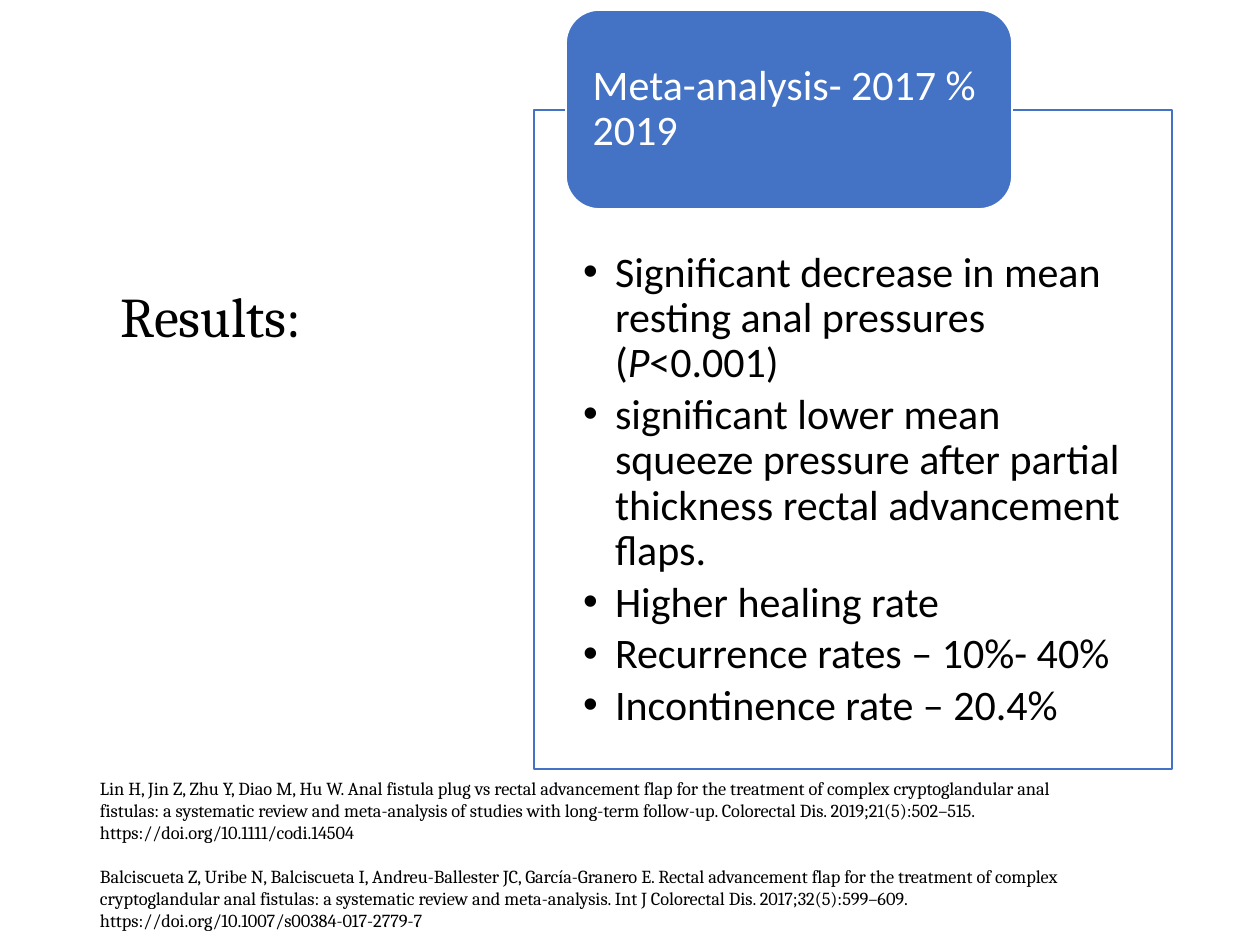
from dataclasses import dataclass

from lxml import etree
from pptx import Presentation
from pptx.dml.color import RGBColor
from pptx.enum import shapes, text
from pptx.oxml.ns import qn
from pptx.util import Emu, Pt

EMU_PER_PX = 914400 / 126


@dataclass(frozen=True)
class Theme:
    accent: RGBColor = RGBColor(0x44, 0x72, 0xC4)
    paper: RGBColor = RGBColor(0xFF, 0xFF, 0xFF)
    ink: RGBColor = RGBColor(0, 0, 0)
    sans: str = "Calibri"
    serif: str = "Cambria"
    heading: float = 32
    body: float = 24
    citation: float = 10.5


THEME = Theme()

FINDINGS = [
    [("Significant decrease in mean resting anal pressures (", False),
     ("P", True), ("<0.001)", False)],
    [("significant lower mean squeeze pressure after partial thickness "
      "rectal advancement flaps.", False)],
    [("Higher healing rate", False)],
    [("Recurrence rates – 10%- 40%", False)],
    [("Incontinence rate – 20.4%", False)],
]

CITATIONS = [
    "Lin H, Jin Z, Zhu Y, Diao M, Hu W. Anal fistula plug vs rectal advancement "
    "flap for the treatment of complex cryptoglandular anal fistulas: a systematic "
    "review and meta-analysis of studies with long-term follow-up. Colorectal Dis. "
    "2019;21(5):502–515. https://doi.org/10.1111/codi.14504",
    "Balciscueta Z, Uribe N, Balciscueta I, Andreu-Ballester JC, García-Granero E. "
    "Rectal advancement flap for the treatment of complex cryptoglandular anal "
    "fistulas: a systematic review and meta-analysis. Int J Colorectal Dis. "
    "2017;32(5):599–609. https://doi.org/10.1007/s00384-017-2779-7",
]


def px(length):
    return Emu(round(length * EMU_PER_PX))


def set_all(target, values):
    for name, value in values.items():
        setattr(target, name, value)


def add_card(slide, kind, box, fill, line):
    card = slide.shapes.add_shape(kind, *map(px, box))
    card.shadow.inherit = False
    card.fill.solid()
    card.fill.fore_color.rgb = fill
    card.line.color.rgb = line
    card.line.width = Pt(1)
    return card


def set_opacity(card, percent):
    color = card.fill._xPr.find(qn("a:solidFill"))[0]
    etree.SubElement(color, qn("a:alpha"), val=str(percent * 1000))


def set_frame(frame, insets, anchor):
    sides = ("margin_left", "margin_top", "margin_right", "margin_bottom")
    set_all(frame, dict(zip(sides, map(px, insets))))
    set_all(frame, {"word_wrap": True, "vertical_anchor": anchor})


def write_paragraphs(frame, paragraphs, font, layout):
    for index, runs in enumerate(paragraphs):
        paragraph = frame.add_paragraph() if index else frame.paragraphs[0]
        set_all(paragraph, {"alignment": text.PP_ALIGN.LEFT, **layout})
        for words, italic in runs:
            run = paragraph.add_run()
            run.text = words
            set_all(run.font, {"name": font["name"], "size": Pt(font["size"]),
                               "italic": italic})
            run.font.color.rgb = font["color"]


def add_bullets(frame, indent):
    for paragraph in frame.paragraphs:
        properties = paragraph._p.get_or_add_pPr()
        properties.set("marL", str(px(indent)))
        properties.set("indent", str(-px(indent)))
        etree.SubElement(properties, qn("a:buFont"), typeface="Arial")
        etree.SubElement(properties, qn("a:buChar"), char="•")


def add_label(slide, box, paragraphs, size, layout):
    label = slide.shapes.add_textbox(*map(px, box))
    set_frame(label.text_frame, (13, 6, 13, 6), text.MSO_ANCHOR.TOP)
    font = {"name": THEME.serif, "size": size, "color": THEME.ink}
    write_paragraphs(label.text_frame, paragraphs, font, layout)


def add_findings(slide):
    panel = add_card(slide, shapes.MSO_SHAPE.RECTANGLE, (534, 110, 638, 659),
                     THEME.paper, THEME.accent)
    set_opacity(panel, 90)
    set_frame(panel.text_frame, (49, 141, 49, 24), text.MSO_ANCHOR.TOP)
    font = {"name": THEME.sans, "size": THEME.body, "color": THEME.ink}
    write_paragraphs(panel.text_frame, FINDINGS, font,
                     {"line_spacing": 0.9, "space_after": Pt(3.6)})
    add_bullets(panel.text_frame, 32)


def add_study_header(slide):
    header = add_card(slide, shapes.MSO_SHAPE.ROUNDED_RECTANGLE,
                      (566, 10, 446, 199), THEME.accent, THEME.paper)
    set_frame(header.text_frame, (17, 0, 17, 0), text.MSO_ANCHOR.MIDDLE)
    font = {"name": THEME.sans, "size": THEME.body, "color": THEME.paper}
    write_paragraphs(header.text_frame, [[("Meta-analysis- 2017 % 2019", False)]],
                     font, {"line_spacing": 0.9})


def main():
    deck = Presentation()
    set_all(deck, {"slide_width": px(1260), "slide_height": px(945)})
    slide = deck.slides.add_slide(deck.slide_layouts[6])
    add_findings(slide)
    add_study_header(slide)
    add_label(slide, (108, 283, 353, 120), [[("Results:", False)]], THEME.heading,
              {"alignment": text.PP_ALIGN.JUSTIFY, "line_spacing": 0.9,
               "space_before": Pt(10)})
    add_label(slide, (87, 771, 1032, 169),
              [[(citation, False)] for citation in CITATIONS], THEME.citation,
              {"space_after": Pt(12.5)})
    deck.save("out.pptx")


if __name__ == "__main__":
    main()
